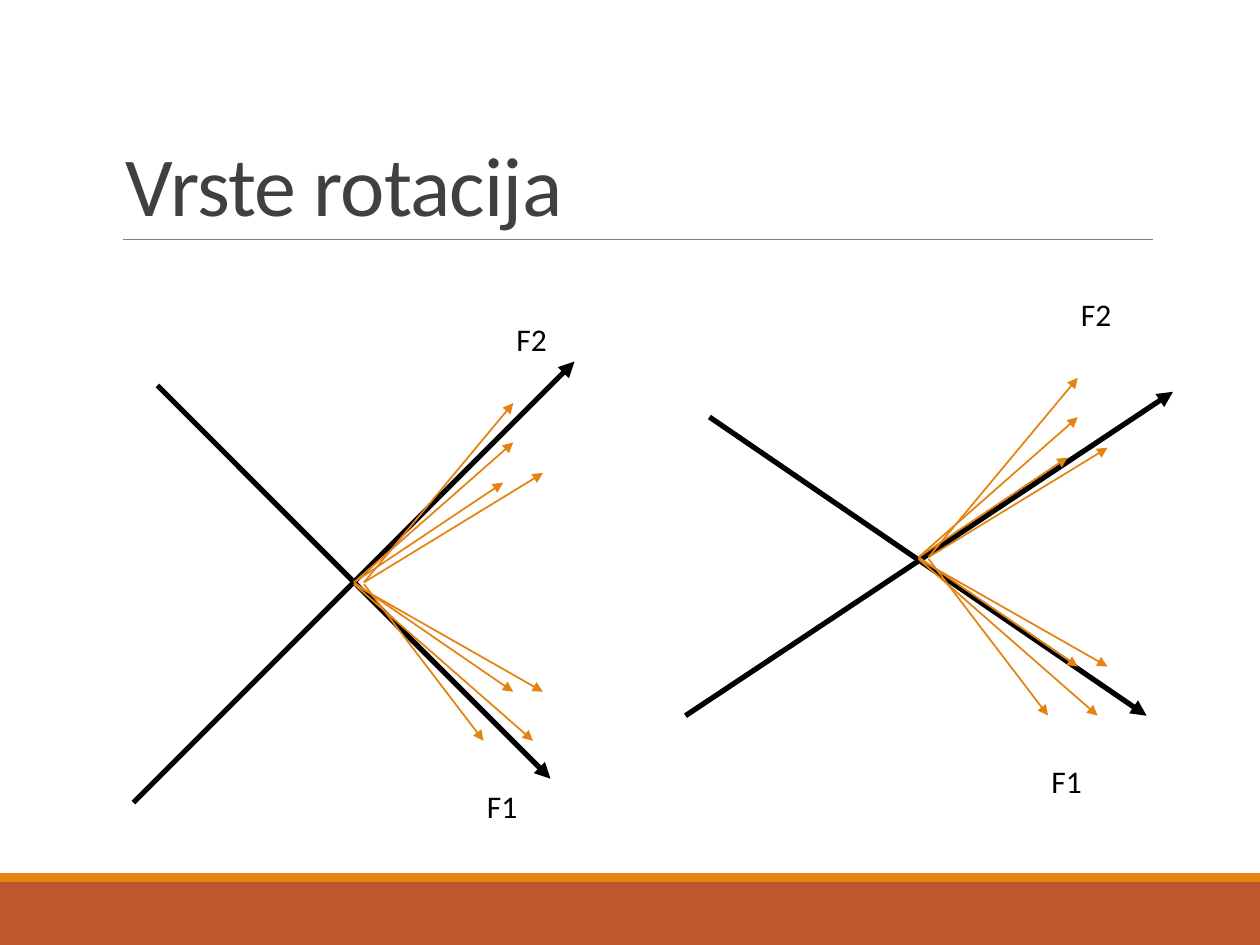
from pptx import Presentation
from pptx.dml.color import RGBColor
from pptx.enum import shapes, text
from pptx.oxml.ns import qn
from pptx.util import Pt
from lxml import etree

BLACK, ORANGE, RUST, GREY, DARK = "000000", "E48312", "BD582C", "808080", "404040"
FONT = "Calibri"
TITLE = "Vrste rotacija"

BANDS = [(504, 36, RUST), (499, 5, ORANGE)]  # top, height, colour

# Each diagram: the crossing point and its two factor axes (start, end).
DIAGRAMS = [
    {"centre": (524.9, 318.4),
     "axes": [((405.4, 238.3), (655.2, 409)), ((391.7, 409), (670.3, 223.9))]},
    {"centre": (202.3, 332.8),
     "axes": [((90, 220.3), (314.6, 445)), ((76.3, 458.6), (328.3, 206.6))]},
]

# Shared by both diagrams, measured from the crossing point.
VECTORS = [
    ((0, 0), (85.2, -57)),
    ((0, 0), (91, -80)),
    ((0, 1), (108, 62.5)),
    ((5.7, 0), (108, -62.5)),
    ((0, 0), (91, 62.5)),
    ((5.7, 1), (74, 90.5)),
    ((5.7, 0), (91, -102.5)),
    ((0, 1), (102.3, 90.5)),
]
LABELS = [("F1", (68.8, 113.6)), ("F2", (85.7, -153.4))]


def colour(value):
    return RGBColor.from_string(value)


def shift(origin, offset):
    return origin[0] + offset[0], origin[1] + offset[1]


def add_line(slide, start, end, value, width, arrow=True):
    line = slide.shapes.add_connector(
        shapes.MSO_CONNECTOR.STRAIGHT, *map(Pt, start + end))
    line.line.color.rgb = colour(value)
    line.line.width = Pt(width)
    properties = line._element.spPr
    if arrow:
        etree.SubElement(properties.find(qn("a:ln")), qn("a:tailEnd"), type="triangle")
    etree.SubElement(properties, qn("a:effectLst"))


def add_text(slide, words, place, size, value, wrap=False):
    box = slide.shapes.add_textbox(*map(Pt, place))
    box.text_frame.word_wrap = wrap
    para = box.text_frame.paragraphs[0]
    para.text = words
    para.font.name = FONT
    para.font.size = Pt(size)
    para.font.color.rgb = colour(value)
    return box


def add_band(slide, width, top, height, value):
    band = slide.shapes.add_shape(
        shapes.MSO_SHAPE.RECTANGLE, 0, Pt(top), width, Pt(height))
    band.shadow.inherit = False
    band.fill.solid()
    band.fill.fore_color.rgb = colour(value)
    band.line.fill.background()


def add_title(slide):
    box = add_text(slide, TITLE, (64.8, 22.3, 594, 114.5), 48, DARK, wrap=True)
    box.text_frame.vertical_anchor = text.MSO_ANCHOR.BOTTOM
    para = box.text_frame.paragraphs[0]
    para.line_spacing = 0.85
    para.runs[0]._r.get_or_add_rPr().set("spc", "-50")


def add_diagram(slide, centre, axes):
    for start, end in axes:
        add_line(slide, start, end, BLACK, 3)
    for start, end in VECTORS:
        add_line(slide, shift(centre, start), shift(centre, end), ORANGE, 1)
    for words, offset in LABELS:
        box = add_text(slide, words, shift(centre, offset) + (32.4, 29), 18, BLACK)
        box.text_frame.auto_size = text.MSO_AUTO_SIZE.SHAPE_TO_FIT_TEXT


def main():
    deck = Presentation()
    deck.slide_width, deck.slide_height = Pt(720), Pt(540)
    slide = deck.slides.add_slide(deck.slide_layouts[6])
    for band in BANDS:
        add_band(slide, deck.slide_width, *band)
    add_line(slide, (70.5, 136.8), (658.8, 136.8), GREY, 0.5, arrow=False)
    add_title(slide)
    for diagram in DIAGRAMS:
        add_diagram(slide, **diagram)
    deck.save("out.pptx")


if __name__ == "__main__":
    main()
